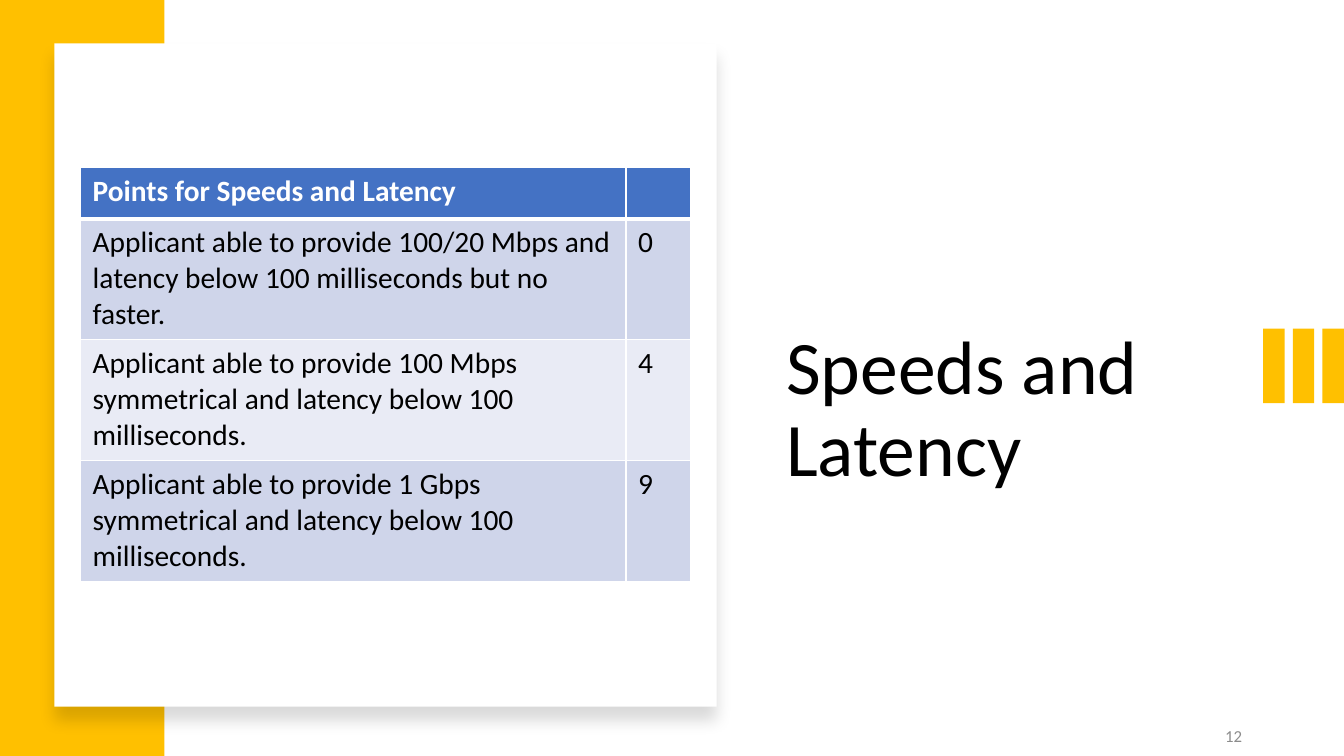
from lxml import etree
from pptx import Presentation
from pptx.dml.color import RGBColor
from pptx.enum.shapes import MSO_SHAPE
from pptx.enum.text import MSO_ANCHOR, PP_ALIGN
from pptx.oxml import parse_xml
from pptx.oxml.ns import nsdecls, qn
from pptx.util import Inches, Pt

RECT = MSO_SHAPE.RECTANGLE
TOP, MIDDLE = MSO_ANCHOR.TOP, MSO_ANCHOR.MIDDLE
LEFT, RIGHT = PP_ALIGN.LEFT, PP_ALIGN.RIGHT

FONT = "Calibri"
GOLD, WHITE, BLACK, GREY = "FFC000", "FFFFFF", "000000", "8C8C8C"
HEADER, BANDS = "4472C4", ("CFD5EA", "E9EBF5")

POINTS = [
    ("Points for Speeds and Latency", ""),
    ("Applicant able to provide 100/20 Mbps and latency below 100 milliseconds but no faster.", "0"),
    ("Applicant able to provide 100 Mbps symmetrical and latency below 100 milliseconds.", "4"),
    ("Applicant able to provide 1 Gbps symmetrical and latency below 100 milliseconds.", "9"),
]


def rgb(color):
    return RGBColor.from_string(color)


class Deck:
    """Slide builder; every length is a percentage of the slide's size."""

    def __init__(self):
        self.prs = Presentation()
        self.prs.slide_width, self.prs.slide_height = Inches(13.333), Inches(7.5)
        self.slide = self.prs.slides.add_slide(self.prs.slide_layouts[6])

    def x(self, share):
        return round(self.prs.slide_width * share / 100)

    def y(self, share):
        return round(self.prs.slide_height * share / 100)

    def box(self, left, top, width, height):
        return self.x(left), self.y(top), self.x(width), self.y(height)

    def style(self, p, size, color, bold=False):
        p.font.name, p.font.size, p.font.bold = FONT, Pt(size), bold
        p.font.color.rgb = rgb(color)

    def rect(self, *place, fill):
        sp = self.slide.shapes.add_shape(RECT, *self.box(*place))
        sp.shadow.inherit = False
        sp.fill.solid()
        sp.fill.fore_color.rgb = rgb(fill)
        sp.line.fill.background()
        return sp

    def soft_shadow(self, sp, blur, distance, alpha):
        effects = sp._element.spPr.find(qn("a:effectLst"))
        shadow = etree.SubElement(
            effects, qn("a:outerShdw"), blurRad=str(Pt(blur)), dist=str(Pt(distance)),
            dir=str(90 * 60000), algn="t", rotWithShape="0")
        color = etree.SubElement(shadow, qn("a:srgbClr"), val=BLACK)
        etree.SubElement(color, qn("a:alpha"), val=str(alpha * 1000))

    def text(self, *place, text, size, color, align=LEFT, anchor=TOP, spacing=1.0):
        tf = self.slide.shapes.add_textbox(*self.box(*place)).text_frame
        tf.word_wrap, tf.vertical_anchor = True, anchor
        p = tf.paragraphs[0]
        p.text, p.alignment, p.line_spacing = text, align, spacing
        self.style(p, size, color)

    def borders(self, cell, top, bottom):
        for side, width in (("L", 1), ("R", 1), ("T", top), ("B", bottom)):
            cell._tc.get_or_add_tcPr().append(parse_xml(
                f'<a:ln{side} {nsdecls("a")} w="{Pt(width)}"><a:solidFill>'
                f'<a:srgbClr val="{WHITE}"/></a:solidFill></a:ln{side}>'))

    def table(self, left, top, widths, heights, rows, size):
        place = self.box(left, top, sum(widths), sum(heights))
        table = self.slide.shapes.add_table(len(rows), len(widths), *place).table
        for column, width in zip(table.columns, widths):
            column.width = self.x(width)
        for i, (row, height) in enumerate(zip(table.rows, heights)):
            row.height = self.y(height)
            head = i == 0
            for cell, value in zip(row.cells, rows[i]):
                cell.margin_left = cell.margin_right = Inches(0.12)
                cell.margin_top = cell.margin_bottom = Inches(0.06)
                self.borders(cell, 3 if i == 1 else 1, 3 if head else 1)
                cell.fill.solid()
                cell.fill.fore_color.rgb = rgb(HEADER if head else BANDS[(i - 1) % 2])
                p = cell.text_frame.paragraphs[0]
                p.text = value
                self.style(p, size, WHITE if head else BLACK, bold=head)


def main():
    deck = Deck()

    # Gold band and the raised white panel
    deck.rect(0, 0, 12.23, 100, fill=GOLD)
    panel = deck.rect(4.05, 5.73, 49.28, 87.73, fill=WHITE)
    deck.soft_shadow(panel, blur=11, distance=10, alpha=15)

    # Three bars at the right edge
    for i in range(3):
        deck.rect(93.98 + 2.21 * i, 43.47, 1.6, 9.87, fill=GOLD)

    # Title and slide number
    deck.text(57.75, 42.93, 33.08, 34.8, text="Speeds and Latency",
              size=54, color=BLACK, spacing=0.9)
    deck.text(82.43, 94.67, 10.73, 5.33, text="12", size=12, color=GREY,
              align=RIGHT, anchor=MIDDLE)

    # Points table
    deck.table(6, 22.13, (40.58, 4.8), (6.8, 16, 16, 16), POINTS, size=21)

    deck.prs.save("out.pptx")


if __name__ == "__main__":
    main()
